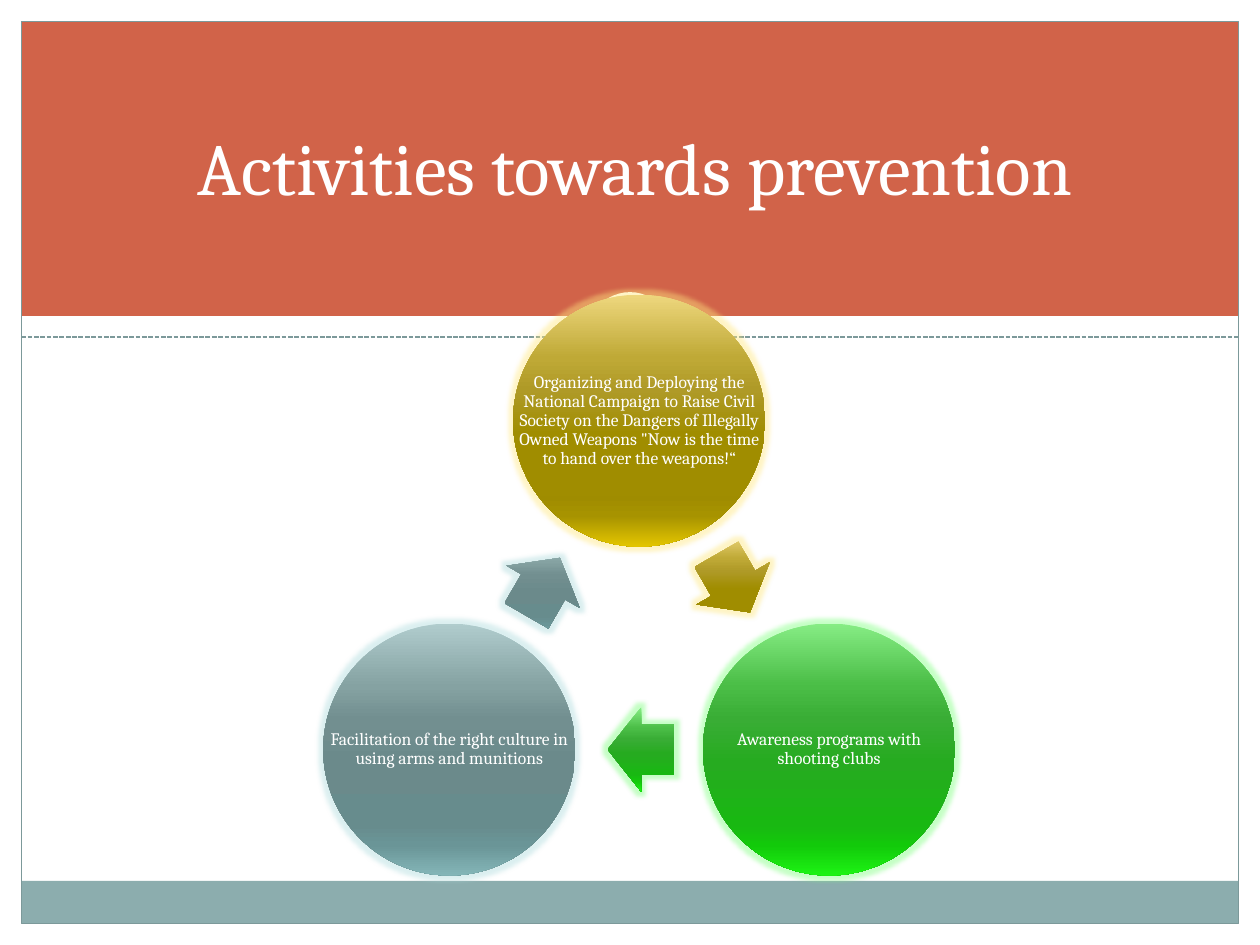
from math import cos, radians, sin

from pptx import Presentation
from pptx.dml.color import RGBColor
from pptx.enum.dml import MSO_LINE_DASH_STYLE as Dash
from pptx.enum.shapes import MSO_CONNECTOR as Connector, MSO_SHAPE as Preset
from pptx.enum.text import MSO_ANCHOR as Anchor, PP_ALIGN as Align
from pptx.oxml import parse_xml
from pptx.oxml.ns import nsdecls
from pptx.oxml.xmlchemy import OxmlElement
from pptx.util import Cm, Pt

WHITE = RGBColor(0xFF, 0xFF, 0xFF)
RED = RGBColor(0xD1, 0x63, 0x49)
TEAL = RGBColor(0x8C, 0xAD, 0xAE)
LINE = RGBColor(0x7C, 0x99, 0x9A)
STOPS = (0, 25, 38, 55, 80, 88, 100)


def ramp(text):
    """Turn a list of hex values into colours."""
    return [RGBColor.from_string(value) for value in text.split()]


GOLD = ramp("EED77E BFA936 AF9A27 A08D00 9F8C00 A79300 E4C600")
GREEN = ramp("86EC84 4ABD46 39AD35 26AB20 19B812 12CA0A 1DF314")
GREY = ramp("B0CCCD 85A2A2 728F90 6B8A8B 678C8D 6A9597 84B6B8")
STEPS = [
    ("Organizing and Deploying the National Campaign to Raise Civil Society on the "
     "Dangers of Illegally Owned Weapons \"Now is the time to hand over the weapons!“",
     GOLD, RGBColor(0xFF, 0xE8, 0x80)),
    ("Awareness programs with shooting clubs", GREEN, RGBColor(0x80, 0xFF, 0x80)),
    ("Facilitation of the right culture in using arms and munitions",
     GREY, RGBColor(0xB0, 0xDC, 0xDE)),
]


def apply_format(target, values):
    """Set every attribute named in a dict."""
    for name, value in values.items():
        setattr(target, name, value)


def add_shape(slide, preset, box, fill=None, line=None, width=0.75):
    """Add a flat preset shape in a box given in centimetres."""
    shape = slide.shapes.add_shape(preset, *map(Cm, box))
    shape.shadow.inherit = False
    if fill is None:
        shape.fill.background()
    else:
        shape.fill.solid()
        shape.fill.fore_color.rgb = fill
    if line is None:
        shape.line.fill.background()
    else:
        shape.line.color.rgb = line
        shape.line.width = Pt(width)
    return shape


def add_glossy(slide, preset, box, colours, glow):
    """Add a shape with an upright gradient and a soft glow."""
    shape = add_shape(slide, preset, box)
    properties = shape._element.spPr
    stops = "".join(f'<a:gs pos="{stop * 1000}"><a:srgbClr val="{colour}"/></a:gs>'
                    for stop, colour in zip(STOPS, colours))
    gradient = parse_xml(f'<a:gradFill {nsdecls("a")} rotWithShape="0"><a:gsLst>{stops}'
                         '</a:gsLst><a:lin ang="5400000" scaled="0"/></a:gradFill>')
    properties.replace(properties.find("{*}noFill"), gradient)
    properties.find("{*}effectLst").append(parse_xml(
        f'<a:glow {nsdecls("a")} rad="63500"><a:srgbClr val="{glow}">'
        '<a:alpha val="45000"/></a:srgbClr></a:glow>'))
    return shape


def add_text(slide, box, text, size, anchor, inset, spacing=1.0):
    """Add centred white text in a box given in centimetres."""
    frame = slide.shapes.add_textbox(*map(Cm, box)).text_frame
    margins = {f"margin_{side}": Cm(inset) for side in ("left", "right", "top", "bottom")}
    apply_format(frame, {"word_wrap": True, "vertical_anchor": anchor, **margins})
    paragraph = frame.paragraphs[0]
    apply_format(paragraph, {"alignment": Align.CENTER, "line_spacing": spacing})
    run = paragraph.add_run()
    run.text = text
    apply_format(run.font, {"name": "Cambria", "size": Pt(size)})
    run.font.color.rgb = WHITE


def add_frame(slide, left, top, width, height):
    """Draw the margins, bands, border, divider and ring of the page."""
    margin, band, gap, foot = 0.43, 5.94, 0.84, 0.86
    inner, right, bottom = width - 2 * margin, left + width, top + height
    inside = left + margin
    band_end = top + margin + band
    bars = [
        ((left, bottom - margin, width, margin), WHITE),
        ((left, top, width, margin), WHITE),
        ((right - margin, top, margin, height), WHITE),
        ((inside, band_end, inner, gap), WHITE),
        ((inside, top + margin, inner, band), RED),
        ((inside, bottom - margin - foot, inner, foot), TEAL),
    ]
    for box, fill in bars:
        add_shape(slide, Preset.RECTANGLE, box, fill)
    add_shape(slide, Preset.RECTANGLE,
              (inside, top + margin, inner, height - 2 * margin), line=LINE)

    middle = band_end + gap / 2
    divider = slide.shapes.add_connector(
        Connector.STRAIGHT, *map(Cm, (inside, middle, right - margin, middle)))
    apply_format(divider.line, {"width": Pt(0.9), "dash_style": Dash.SQUARE_DOT})
    divider.line.color.rgb = LINE
    divider._element.spPr.append(OxmlElement("a:effectLst"))

    for size, line in ((1.7, None), (1.17, LINE)):
        ring = (left + (width - size) / 2, middle - 0.05 - size / 2, size, size)
        add_shape(slide, Preset.OVAL, ring, WHITE, line, 4)


def add_title(slide, left, top, width, height):
    """Place the heading at the foot of its box."""
    add_text(slide, (left, top, width, height), "Activities towards prevention",
             42, Anchor.BOTTOM, 0.13)


def add_cycle(slide, left, top, width, height):
    """Place three circles on a ring, with an arrow from each to the next."""
    disc, arrow_width, arrow_height, setback = 5.08, 1.35, 1.7, 0.04
    radius = (height - disc) / 1.5
    centre_x, centre_y = left + width / 2, top + disc / 2 + radius
    for index, (text, colours, glow) in enumerate(STEPS):
        angle = radians(120 * index - 90)
        x = centre_x + radius * cos(angle)
        y = centre_y + radius * sin(angle)
        box = (x - disc / 2, y - disc / 2, disc, disc)
        add_glossy(slide, Preset.OVAL, box, colours, glow)
        add_text(slide, box, text, 10, Anchor.MIDDLE, 0.03, 0.9)

        rotation = 60 + 120 * index
        outward, heading = radians(rotation - 90), radians(rotation)
        x = centre_x + radius / 2 * cos(outward) - setback * cos(heading)
        y = centre_y + radius / 2 * sin(outward) - setback * sin(heading)
        box = (x - arrow_width / 2, y - arrow_height / 2, arrow_width, arrow_height)
        arrow = add_glossy(slide, Preset.RIGHT_ARROW, box, colours, glow)
        arrow.rotation = rotation
        arrow.adjustments[0], arrow.adjustments[1] = 0.6, 0.5


def main():
    """Build and save the slide."""
    presentation = Presentation()
    apply_format(presentation, {"slide_width": Cm(25.4), "slide_height": Cm(19.05)})
    slide = presentation.slides.add_slide(presentation.slide_layouts[6])
    add_frame(slide, 0, 0, 25.4, 19.05)
    add_title(slide, 2, 1.47, 21.6, 2.9)
    add_cycle(slide, 6.52, 5.94, 12.73, 11.71)
    presentation.save("out.pptx")


if __name__ == "__main__":
    main()
